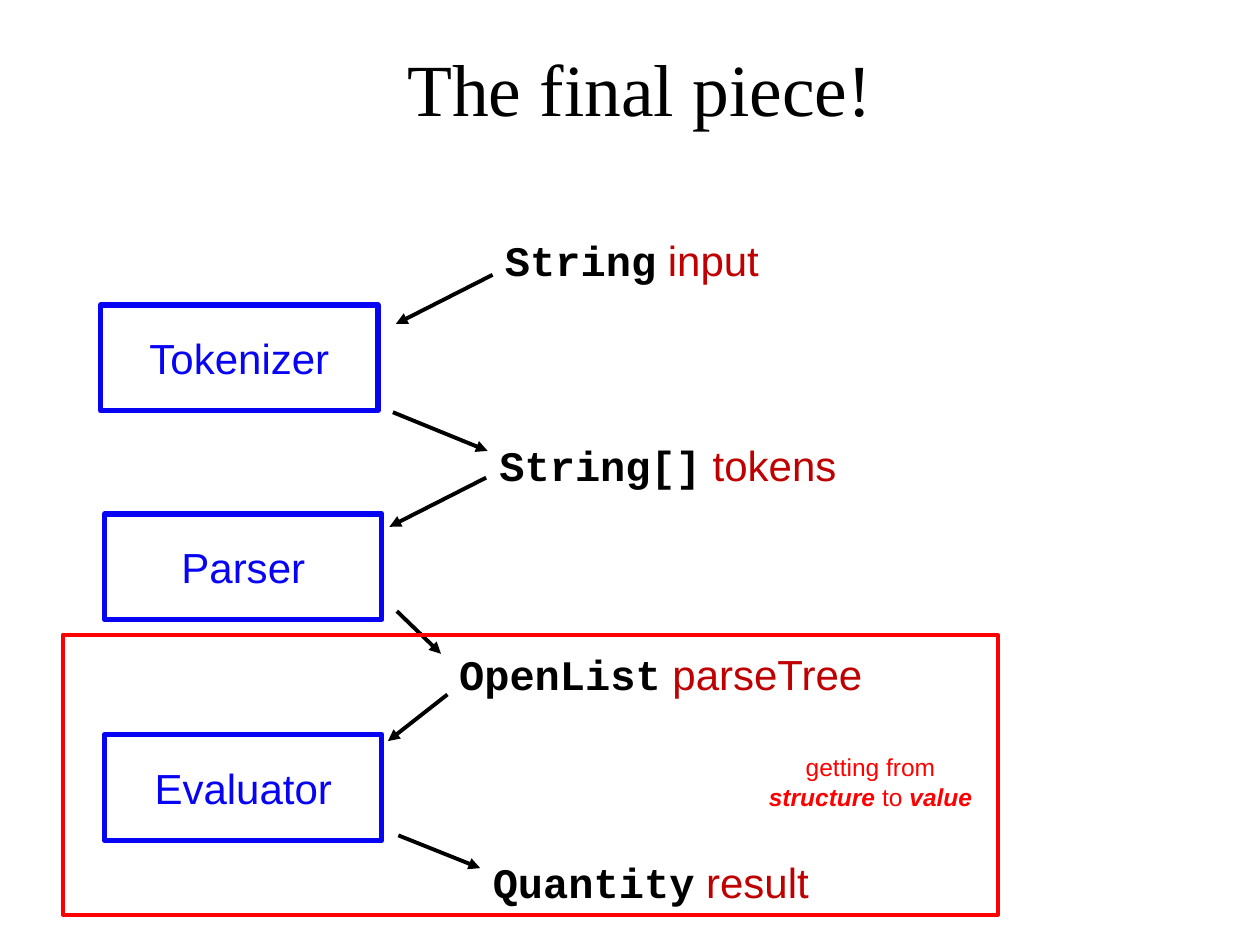
from lxml.etree import SubElement
from pptx import Presentation
from pptx.dml.color import RGBColor
from pptx.enum.shapes import MSO_CONNECTOR as Link, MSO_SHAPE as Shape
from pptx.enum.text import MSO_ANCHOR as Anchor, MSO_AUTO_SIZE as Fit, PP_ALIGN as Align
from pptx.oxml.ns import qn
from pptx.util import Cm, Pt

BLACK, BLUE, RED, DARK = "000000", "0703F3", "FF0000", "C00000"
PLAIN = dict(name="Arial", size=Pt(24), bold=False, italic=False)
CODE = PLAIN | dict(name="Courier New", bold=True)
HEAD = PLAIN | dict(name="Times New Roman", size=Pt(42))
NOTE = PLAIN | dict(size=Pt(14))
STRONG = NOTE | dict(bold=True, italic=True)

BOX_W, BOX_H, LABEL_H = 5.59, 2.13, 1.27
# Box corner, then label (x, y, width) and arrows (x1, y1, x2, y2) from that corner
STAGES = [
    ("Tokenizer", (2.03, 6.15), "String", "input", (7.32, -1.55, 6.78),
     (7.9, -0.61, 5.95, 0.38), (5.89, 2.16, 7.8, 2.94)),
    ("Parser", (2.11, 10.36), "String[]", "tokens", (7.14, -1.62, 8.43),
     (7.69, -0.73, 5.74, 0.26), (5.89, 1.96, 6.78, 2.82)),
    ("Evaluator", (2.11, 14.81), "OpenList", "parseTree", (5.94, -1.86, 10.54),
     (6.91, -0.81, 5.71, 0.13), (5.92, 2.03, 7.57, 2.69)),
]


def tint(color, code):
    color.rgb = RGBColor.from_string(code)


def write(shape, runs, anchor=Anchor.TOP):
    """Fill a shape with one centred paragraph of (text, format, colour) runs."""
    frame = shape.text_frame
    looks = dict(word_wrap=True, auto_size=Fit.NONE, vertical_anchor=anchor)
    for key, value in looks.items():
        setattr(frame, key, value)
    para = frame.paragraphs[0]
    para.alignment = Align.CENTER
    for text, style, code in runs:
        run = para.add_run()
        run.text = text
        for key, value in style.items():
            setattr(run.font, key, value)
        tint(run.font.color, code)


def add_text(slide, box, runs):
    write(slide.shapes.add_textbox(*map(Cm, box)), runs)


def add_label(slide, x, y, width, kind, name):
    add_text(slide, (x, y, width, LABEL_H),
             [(kind, CODE, BLACK), (" " + name, PLAIN, DARK)])


def add_rect(slide, box, code, weight):
    rect = slide.shapes.add_shape(Shape.RECTANGLE, *map(Cm, box))
    rect.shadow.inherit = False
    rect.fill.background()
    tint(rect.line.color, code)
    rect.line.width = Pt(weight)
    return rect


def add_arrow(slide, x, y, ends):
    x1, y1, x2, y2 = ends
    points = map(Cm, (x + x1, y + y1, x + x2, y + y2))
    arrow = slide.shapes.add_connector(Link.STRAIGHT, *points)
    tint(arrow.line.color, BLACK)
    arrow.line.width = Pt(2.25)
    SubElement(arrow.line._get_or_add_ln(), qn("a:tailEnd"), type="triangle")
    SubElement(arrow._element.spPr, qn("a:effectLst"))


def add_title(slide, box):
    title = slide.shapes.title
    title.left, title.top, title.width, title.height = map(Cm, box)
    write(title, [("The final piece!", HEAD, BLACK)])


def add_stage(slide, step, corner, kind, name, label, inward, outward):
    """Draw a step's box, the label of its input, and the arrows in and out."""
    x, y = corner
    rect = add_rect(slide, (x, y, BOX_W, BOX_H), BLUE, 3)
    write(rect, [(step, PLAIN, BLUE)], Anchor.MIDDLE)
    dx, dy, width = label
    add_label(slide, x + dx, y + dy, width, kind, name)
    for ends in (inward, outward):
        add_arrow(slide, x, y, ends)


def add_focus(slide, x, y, width, height):
    """Frame the last step, with its result and a side note."""
    add_label(slide, x + 7.62, y + 4.35, 8.46, "Quantity", "result")
    add_rect(slide, (x, y, width, height), RED, 2.25)
    add_text(slide, (x + 13.97, y + 2.24, 4.62, 1.45),
             [("getting from ", NOTE, RED), ("structure ", STRONG, RED),
              ("to ", NOTE, RED), ("value", STRONG, RED)])


def main():
    deck = Presentation()
    deck.slide_width, deck.slide_height = Cm(25.4), Cm(19.05)
    slide = deck.slides.add_slide(deck.slide_layouts[5])
    add_title(slide, (2.46, 0.74, 20.88, 2.03))
    for stage in STAGES:
        add_stage(slide, *stage)
    add_focus(slide, 1.27, 12.8, 18.85, 5.64)
    deck.save("out.pptx")


if __name__ == "__main__":
    main()
